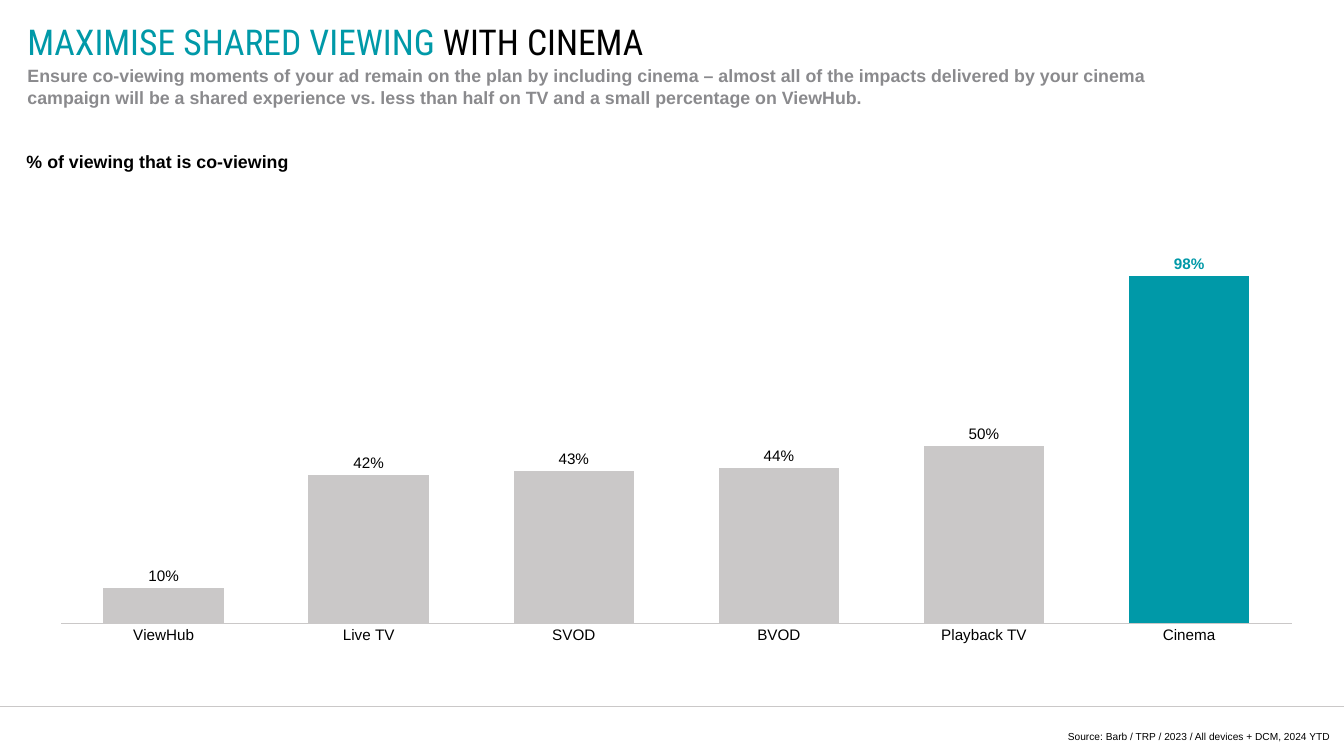
import pptx
import pptx.chart.data
import pptx.dml.color
import pptx.enum.chart
import pptx.enum.shapes
import pptx.enum.text
import pptx.oxml
import pptx.oxml.ns
import pptx.util
from pptx.util import Inches

TEAL, GREY, BLACK, MID_GREY = "0099A8", "CAC8C8", "000000", "8A8A8D"
SLIDE_WIDTH, SLIDE_HEIGHT = 14.7, 8.27
MARGIN = 0.3
CO_VIEWING = {
    "ViewHub": 0.10,
    "Live TV": 0.42,
    "SVOD": 0.43,
    "BVOD": 0.44,
    "Playback TV": 0.50,
    "Cinema": 0.98,
}


def color(hex_string):
    return pptx.dml.color.RGBColor.from_string(hex_string)


def style_font(font, size, fill, bold=False, name="Arial"):
    font.name, font.size, font.bold = name, pptx.util.Pt(size), bold
    font.color.rgb = color(fill)


def add_text(slide, box, runs, size, bold=False, font="Arial", spacing=None,
             align="LEFT", anchor="TOP"):
    """Place one paragraph; runs is a list of (text, colour) pairs."""
    frame = slide.shapes.add_textbox(*map(Inches, box)).text_frame
    frame.word_wrap = True
    frame.margin_left = frame.margin_right = frame.margin_top = frame.margin_bottom = 0
    frame.vertical_anchor = getattr(pptx.enum.text.MSO_ANCHOR, anchor)
    paragraph = frame.paragraphs[0]
    paragraph.alignment = getattr(pptx.enum.text.PP_ALIGN, align)
    if spacing:
        paragraph.line_spacing = pptx.util.Pt(spacing)
    for text, fill in runs:
        run = paragraph.add_run()
        run.text = text
        style_font(run.font, size, fill, bold, font)


def add_heading(slide, left, top):
    add_text(slide, (left, top, 13.58, 0.31),
             [("MAXIMISE SHARED VIEWING ", TEAL), ("WITH CINEMA", BLACK)],
             28, font="Roboto Condensed", anchor="MIDDLE")
    add_text(slide, (left, top + 0.41, 13.17, 0.48),
             [("Ensure co-viewing moments of your ad remain on the plan by including "
               "cinema – almost all of the impacts delivered by your cinema campaign "
               "will be a shared experience vs. less than half on TV and a small "
               "percentage on ViewHub.", MID_GREY)],
             14, bold=True, spacing=16.8)


def set_plot_area(chart, x, y, w, h):
    """Fix the inner plot area as fractions of the chart."""
    plot_area = chart._chartSpace.chart.plotArea
    for layout in plot_area.findall(pptx.oxml.ns.qn("c:layout")):
        plot_area.remove(layout)
    plot_area.insert(0, pptx.oxml.parse_xml(
        f'<c:layout {pptx.oxml.ns.nsdecls("c")}><c:manualLayout>'
        '<c:layoutTarget val="inner"/><c:xMode val="edge"/><c:yMode val="edge"/>'
        f'<c:x val="{x}"/><c:y val="{y}"/><c:w val="{w}"/><c:h val="{h}"/>'
        '</c:manualLayout></c:layout>'))


def add_co_viewing_chart(slide, left, top, width, height):
    add_text(slide, (left, top - 0.31, 6.54, 0.31),
             [("% of viewing that is co-viewing", BLACK)], 14, bold=True, spacing=15)
    data = pptx.chart.data.CategoryChartData(number_format="0%")
    data.categories = list(CO_VIEWING)
    data.add_series("Co-viewing", list(CO_VIEWING.values()))
    chart = slide.shapes.add_chart(
        pptx.enum.chart.XL_CHART_TYPE.COLUMN_CLUSTERED,
        *map(Inches, (left, top, width, height)), data).chart
    chart.has_legend = chart.has_title = False
    style_font(chart.font, 10, BLACK)
    set_plot_area(chart, 0.027, 0.036, 0.96, 0.874)

    shares = chart.value_axis
    shares.minimum_scale, shares.maximum_scale = 0, 1.2
    shares.has_major_gridlines = shares.visible = False
    channels = chart.category_axis
    channels.major_tick_mark = pptx.enum.chart.XL_TICK_MARK.NONE
    style_font(channels.tick_labels.font, 12, BLACK)
    channels.format.line.color.rgb = color(GREY)
    channels.format.line.width = pptx.util.Pt(0.75)

    columns = chart.plots[0]
    columns.gap_width, columns.overlap = 70, -27
    columns.vary_by_categories = False
    series = columns.series[0]
    series.format.fill.solid()
    series.format.fill.fore_color.rgb = color(GREY)
    outside = pptx.enum.chart.XL_LABEL_POSITION.OUTSIDE_END
    labels = series.data_labels
    labels.show_value = True
    labels.number_format, labels.number_format_is_linked = "0%", False
    labels.position = outside
    style_font(labels.font, 12, BLACK)

    cinema = series.points[list(CO_VIEWING).index("Cinema")]
    cinema.format.fill.solid()
    cinema.format.fill.fore_color.rgb = color(TEAL)
    style_font(cinema.data_label.font, 12, TEAL, bold=True)
    cinema.data_label.position = outside


def add_footer(slide, top):
    rule = slide.shapes.add_connector(
        pptx.enum.shapes.MSO_CONNECTOR.STRAIGHT,
        0, Inches(top), Inches(SLIDE_WIDTH), Inches(top))
    rule.line.color.rgb = color(GREY)
    rule.line.width = pptx.util.Pt(0.5)
    rule._element.spPr.append(pptx.oxml.parse_xml(
        f'<a:effectLst {pptx.oxml.ns.nsdecls("a")}/>'))
    add_text(slide, (11.14, top + 0.15, 3.41, 0.23),
             [("Source: Barb / TRP / 2023 / All devices + DCM, 2024 YTD", BLACK)],
             8, spacing=19, align="RIGHT", anchor="MIDDLE")


def main():
    deck = pptx.Presentation()
    deck.slide_width, deck.slide_height = Inches(SLIDE_WIDTH), Inches(SLIDE_HEIGHT)
    slide = deck.slides.add_slide(deck.slide_layouts[6])
    add_footer(slide, 7.73)
    add_heading(slide, MARGIN, 0.3)
    add_co_viewing_chart(slide, 0.29, 1.98, 14.02, 5.32)
    deck.save("out.pptx")


if __name__ == "__main__":
    main()
